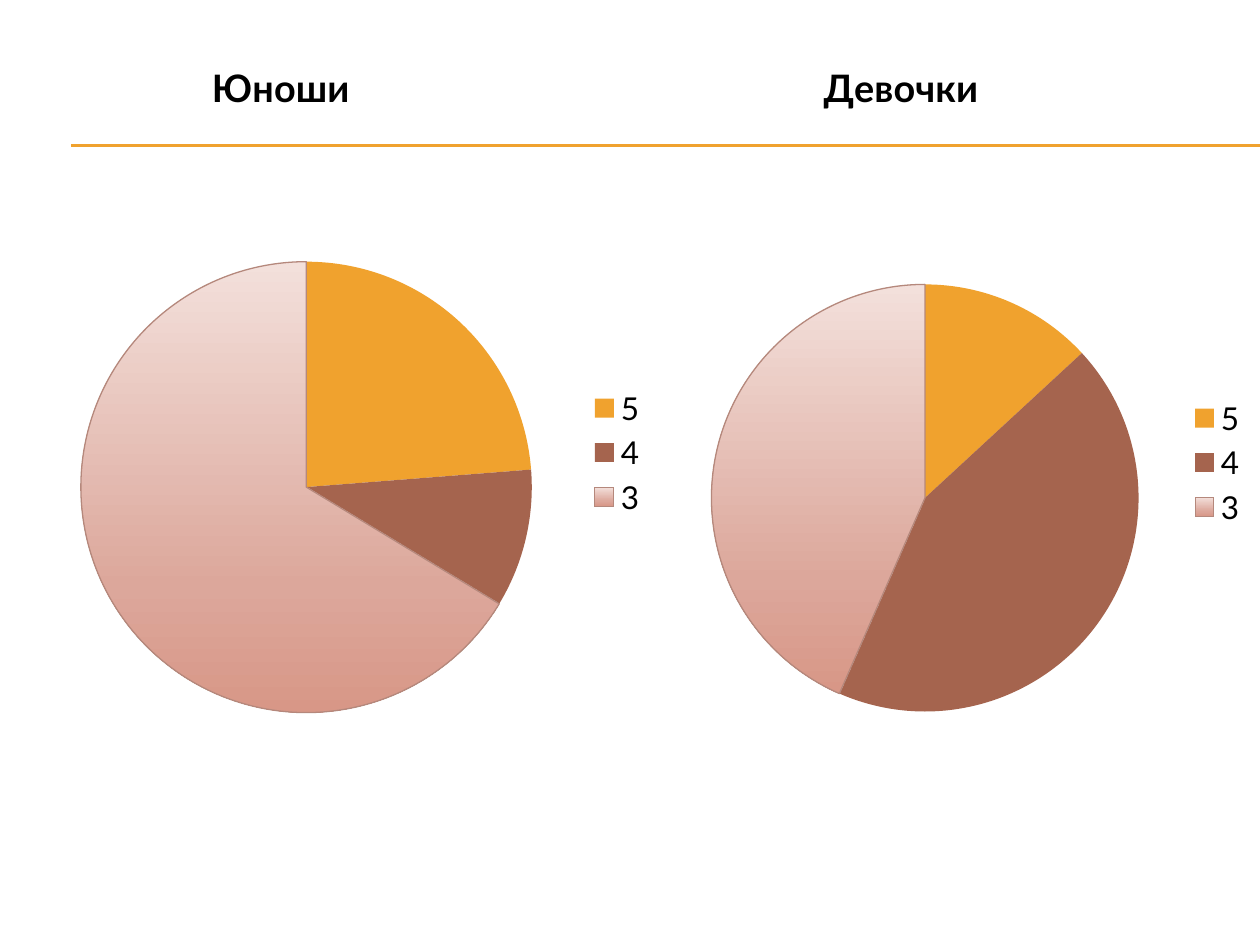
import copy
from dataclasses import dataclass

import pptx
import pptx.chart.data
import pptx.dml.color
import pptx.enum.chart
import pptx.enum.shapes
import pptx.oxml
import pptx.oxml.ns
import pptx.util

PX = 914400 // 126


@dataclass(frozen=True)
class Theme:
    font: str = "Lato"
    text: str = "000000"
    rule: str = "F0A22E"
    five: str = "F0A22E"
    four: str = "A5644E"
    three: tuple = ((0, "F3E0DB"), (0.72, "DCA79B"), (1, "D89787"))
    three_line: str = "B5887C"
    title_size: float = 21.6
    legend_size: float = 18
    line_width: float = 0.75


THEME = Theme()
GRADES = ["5", "4", "3"]
PLOT = {"x": 0.236, "y": 0.122, "w": 0.595, "h": 0.838}
CHARTS = [
    ("Юноши", (24, 10, 67), (-98, 29, 758, 847)),
    ("Девочки", (13, 43, 43), (542, 29, 718, 867)),
]


def px(*values):
    return [v * PX for v in values]


def rgb(value):
    return pptx.dml.color.RGBColor.from_string(value)


def format_font(font, size, bold=False, color=THEME.text):
    font.name = THEME.font
    font.size = pptx.util.Pt(size)
    font.bold = bold
    font.color.rgb = rgb(color)


def add_text(tf, text, **fmt):
    r = tf.paragraphs[0].add_run()
    r.text = text
    format_font(r.font, **fmt)


def add_rule(slide, y):
    line = slide.shapes.add_connector(
        pptx.enum.shapes.MSO_CONNECTOR.STRAIGHT, *px(71, y, 1260, y))
    line.line.color.rgb = rgb(THEME.rule)
    line.line.width = pptx.util.Pt(THEME.line_width)
    pptx.oxml.ns.qn("a:effectLst")
    line._element.spPr.append(pptx.oxml.parse_xml(
        f"<a:effectLst {pptx.oxml.ns.nsdecls('a')}/>"))


def set_plot_layout(chart):
    area = chart._chartSpace.xpath("c:chart/c:plotArea")[0]
    for old in area.xpath("c:layout"):
        area.remove(old)
    sides = "".join(f'<c:{k} val="{v}"/>' for k, v in PLOT.items())
    area.insert(0, pptx.oxml.parse_xml(
        f"<c:layout {pptx.oxml.ns.nsdecls('c')}><c:manualLayout>"
        '<c:layoutTarget val="inner"/><c:xMode val="edge"/><c:yMode val="edge"/>'
        f"{sides}</c:manualLayout></c:layout>"))


def paint_gradient(chart, point):
    fill = point.format.fill
    fill.gradient()
    fill.gradient_angle = 270
    stop_list = chart._chartSpace.xpath(".//a:gsLst")[0]
    stop_list.insert(1, copy.deepcopy(stop_list[0]))
    for stop, (position, color) in zip(fill.gradient_stops, THEME.three):
        stop.position = position
        stop.color.rgb = rgb(color)
    point.format.line.color.rgb = rgb(THEME.three_line)
    point.format.line.width = pptx.util.Pt(THEME.line_width)


def paint_points(chart):
    points = chart.plots[0].series[0].points
    for i, color in enumerate((THEME.five, THEME.four)):
        fmt = points[i].format
        fmt.fill.solid()
        fmt.fill.fore_color.rgb = rgb(color)
        fmt.line.fill.background()
    paint_gradient(chart, points[2])


def add_pie(slide, title, values, box):
    data = pptx.chart.data.CategoryChartData()
    data.categories = GRADES
    data.add_series(title, values)
    chart = slide.shapes.add_chart(
        pptx.enum.chart.XL_CHART_TYPE.PIE, *px(*box), data).chart
    format_font(chart.font, THEME.legend_size)
    chart.has_title = True
    add_text(chart.chart_title.text_frame, title, size=THEME.title_size, bold=True)
    for overlay in chart._chartSpace.xpath("c:chart/c:title/c:overlay"):
        overlay.set("val", "1")
    chart.has_legend = True
    chart.legend.position = pptx.enum.chart.XL_LEGEND_POSITION.RIGHT
    chart.legend.include_in_layout = True
    format_font(chart.legend.font, THEME.legend_size)
    chart.plots[0].vary_by_categories = True
    set_plot_layout(chart)
    paint_points(chart)


def main():
    prs = pptx.Presentation()
    prs.slide_width, prs.slide_height = px(1260, 945)
    slide = prs.slides.add_slide(prs.slide_layouts[6])
    for y in (145, 146):
        add_rule(slide, y)
    for title, values, box in CHARTS:
        add_pie(slide, title, values, box)
    prs.save("out.pptx")


if __name__ == "__main__":
    main()
